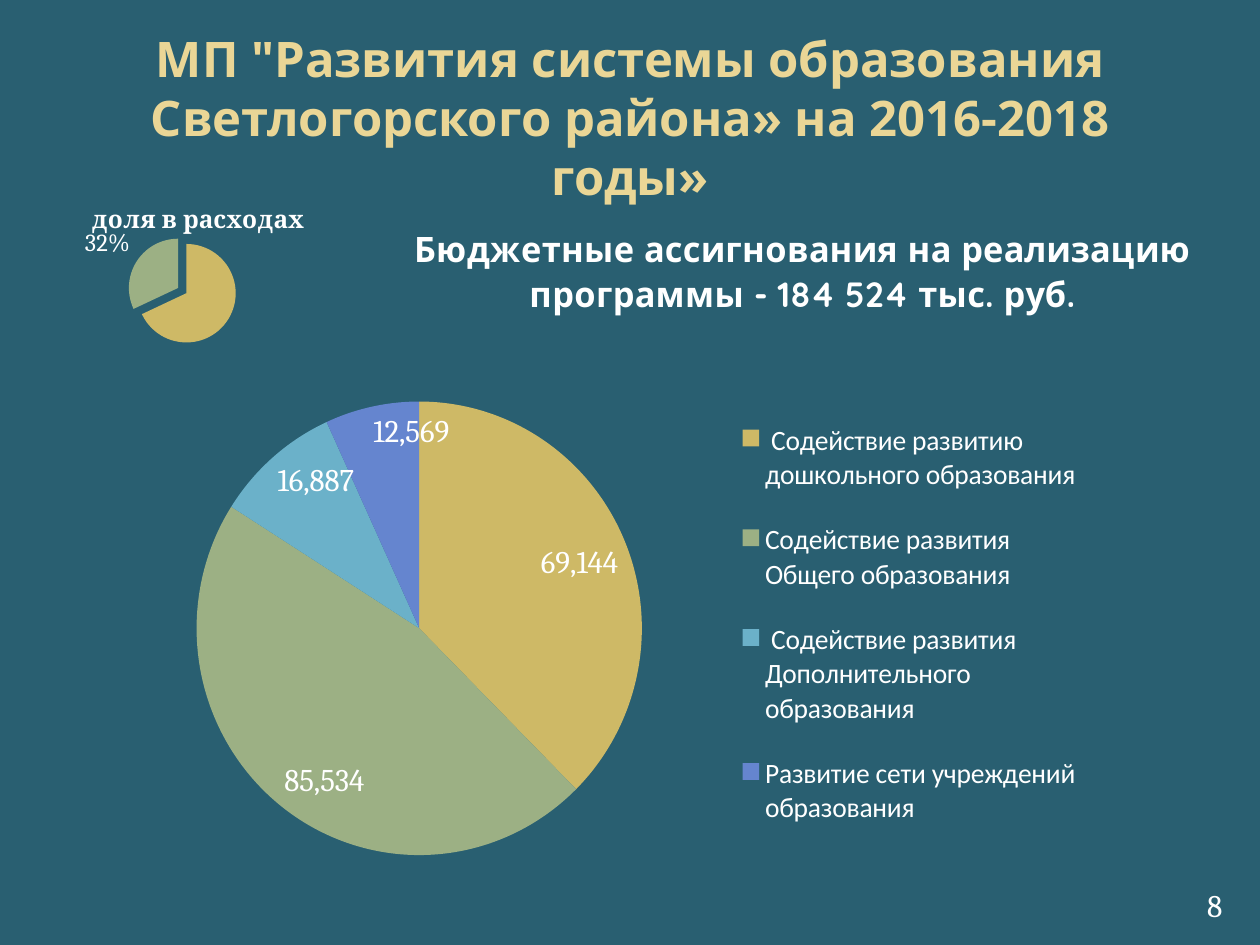
from dataclasses import dataclass
from typing import Optional

from lxml.etree import SubElement
from pptx import Presentation
from pptx.chart.chart import Chart
from pptx.chart.data import CategoryChartData
from pptx.dml.color import RGBColor
from pptx.enum.chart import XL_CHART_TYPE, XL_LABEL_POSITION, XL_LEGEND_POSITION
from pptx.enum.text import MSO_ANCHOR, MSO_AUTO_SIZE, PP_ALIGN
from pptx.oxml.ns import qn
from pptx.slide import Slide
from pptx.util import Pt


@dataclass(frozen=True)
class Theme:
    background: str = "295F71"
    heading: str = "EAD696"
    text: str = "FFFFFF"
    slices: tuple = ("CEB966", "9CB084", "6BB1C9", "6585CF")
    heading_font: str = "Noto Sans"
    body_font: str = "Cambria"
    budget_font: str = "Quicksand"
    legend_font: str = "Calibri"
    heading_size: int = 28
    budget_size: int = 20
    body_size: int = 18
    legend_size: int = 16
    small_size: int = 14


THEME = Theme()


@dataclass(frozen=True)
class Label:
    text: str
    box: tuple
    font: str
    size: int
    color: str
    align: PP_ALIGN
    bold: bool = False
    grow: bool = False


@dataclass(frozen=True)
class Pie:
    title: str
    title_font: str
    title_size: int
    title_at: tuple
    box: tuple
    plot: tuple
    series: str
    slices: dict
    label_size: int
    label_position: XL_LABEL_POSITION
    percent: bool = False
    explosion: int = 0
    hidden_label: Optional[int] = None
    legend_at: Optional[tuple] = None


def rgb(color: str) -> RGBColor:
    return RGBColor.from_string(color)


def add_label(slide: Slide, label: Label) -> None:
    frame = slide.shapes.add_textbox(*map(Pt, label.box)).text_frame
    frame.word_wrap = True
    if label.grow:
        frame.auto_size = MSO_AUTO_SIZE.SHAPE_TO_FIT_TEXT
    else:
        frame.vertical_anchor = MSO_ANCHOR.MIDDLE
    paragraph = frame.paragraphs[0]
    paragraph.text = label.text
    paragraph.alignment = label.align
    font = paragraph.font
    font.name, font.size, font.bold = label.font, Pt(label.size), label.bold
    font.color.rgb = rgb(label.color)


def place(parent, index: int, fractions: tuple, inner: bool = False) -> None:
    """Give a chart part a manual layout: x, y and optionally w, h."""
    for old in parent.findall(qn("c:layout")):
        parent.remove(old)
    layout = SubElement(parent, qn("c:layout"))
    manual = SubElement(layout, qn("c:manualLayout"))
    if inner:
        SubElement(manual, qn("c:layoutTarget")).set("val", "inner")
    for mode in ("xMode", "yMode"):
        SubElement(manual, qn(f"c:{mode}")).set("val", "edge")
    for key, value in zip("xywh", fractions):
        SubElement(manual, qn(f"c:{key}")).set("val", str(value))
    parent.insert(index, layout)


def style_slices(chart: Chart, pie: Pie) -> None:
    plot = chart.plots[0]
    plot.vary_by_categories = True
    series = plot.series[0]
    for index, color in enumerate(THEME.slices[:len(pie.slices)]):
        fill = series.points[index].format.fill
        fill.solid()
        fill.fore_color.rgb = rgb(color)
    if pie.explosion:
        explosion = SubElement(series._element, qn("c:explosion"))
        explosion.set("val", str(pie.explosion))
        series._element.find(qn("c:tx")).addnext(explosion)

    labels = series.data_labels
    labels.show_value = not pie.percent
    labels.show_percentage = pie.percent
    labels.number_format = "0%" if pie.percent else "#,##0"
    labels.number_format_is_linked = False
    labels.position = pie.label_position
    labels.font.size = Pt(pie.label_size)
    labels.font.name = THEME.body_font
    labels.font.color.rgb = rgb(THEME.text)
    if pie.hidden_label is not None:
        hidden = SubElement(labels._element, qn("c:dLbl"))
        SubElement(hidden, qn("c:idx")).set("val", str(pie.hidden_label))
        SubElement(hidden, qn("c:delete")).set("val", "1")
        labels._element.insert(0, hidden)


def add_pie(slide: Slide, pie: Pie) -> None:
    data = CategoryChartData()
    data.categories = list(pie.slices)
    data.add_series(pie.series, list(pie.slices.values()))
    chart = slide.shapes.add_chart(XL_CHART_TYPE.PIE, *map(Pt, pie.box), data).chart
    chart.font.name = THEME.body_font
    chart.font.size = Pt(THEME.body_size)
    chart.font.color.rgb = rgb(THEME.text)

    # Chart title
    chart.has_title = True
    paragraph = chart.chart_title.text_frame.paragraphs[0]
    paragraph.text = pie.title
    font = paragraph.font
    font.name, font.size, font.bold = pie.title_font, Pt(pie.title_size), True
    font.color.rgb = rgb(THEME.text)
    place(chart.chart_title._element, 1, pie.title_at)

    style_slices(chart, pie)
    place(chart._chartSpace.chart.plotArea, 0, pie.plot, inner=True)

    # Legend
    chart.has_legend = pie.legend_at is not None
    if pie.legend_at:
        legend = chart.legend
        legend.position = XL_LEGEND_POSITION.RIGHT
        legend.include_in_layout = False
        legend.font.name = THEME.legend_font
        legend.font.size = Pt(THEME.legend_size)
        legend.font.color.rgb = rgb(THEME.text)
        place(legend._element, 1, pie.legend_at)


HEADING = Label(
    'МП "Развития системы образования Светлогорского района» на 2016-2018 годы»',
    (36, 21.6, 648, 90), THEME.heading_font, THEME.heading_size, THEME.heading,
    PP_ALIGN.CENTER, bold=True)
PAGE_NUMBER = Label("8", (620.6, 502.6, 85, 28.8), THEME.body_font,
                    THEME.body_size, THEME.text, PP_ALIGN.RIGHT, grow=True)

BUDGET = Pie(
    title="Бюджетные ассигнования на реализацию программы - 184 524 тыс. руб.",
    title_font=THEME.budget_font, title_size=THEME.budget_size, title_at=(0.31, 0.03),
    box=(36, 111.6, 648, 402.5), plot=(0.12, 0.26, 0.4, 0.71),
    series="Series 1",
    slices={
        " Содействие развитию дошкольного образования": 69144,
        "Содействие развития Общего образования": 85534,
        " Содействие развития Дополнительного образования": 16887,
        "Развитие сети учреждений образования ": 12569,
    },
    label_size=THEME.body_size, label_position=XL_LABEL_POSITION.INSIDE_END,
    legend_at=(0.61, 0.28, 0.3, 0.66))
SHARE = Pie(
    title="доля в расходах",
    title_font=THEME.body_font, title_size=THEME.small_size, title_at=(0.18, 0.07),
    box=(20.2, 105.8, 166.3, 108.7), plot=(0.07, 0.27, 0.87, 0.57),
    series="доля в расходах", slices={"1": 68, "2": 32},
    label_size=THEME.small_size, label_position=XL_LABEL_POSITION.BEST_FIT,
    percent=True, explosion=10, hidden_label=0)


def main() -> None:
    deck = Presentation()
    deck.slide_width, deck.slide_height = Pt(720), Pt(540)
    slide = deck.slides.add_slide(deck.slide_layouts[6])
    slide.background.fill.solid()
    slide.background.fill.fore_color.rgb = rgb(THEME.background)

    add_label(slide, HEADING)
    add_pie(slide, BUDGET)
    add_label(slide, PAGE_NUMBER)
    add_pie(slide, SHARE)
    deck.save("out.pptx")


if __name__ == "__main__":
    main()
